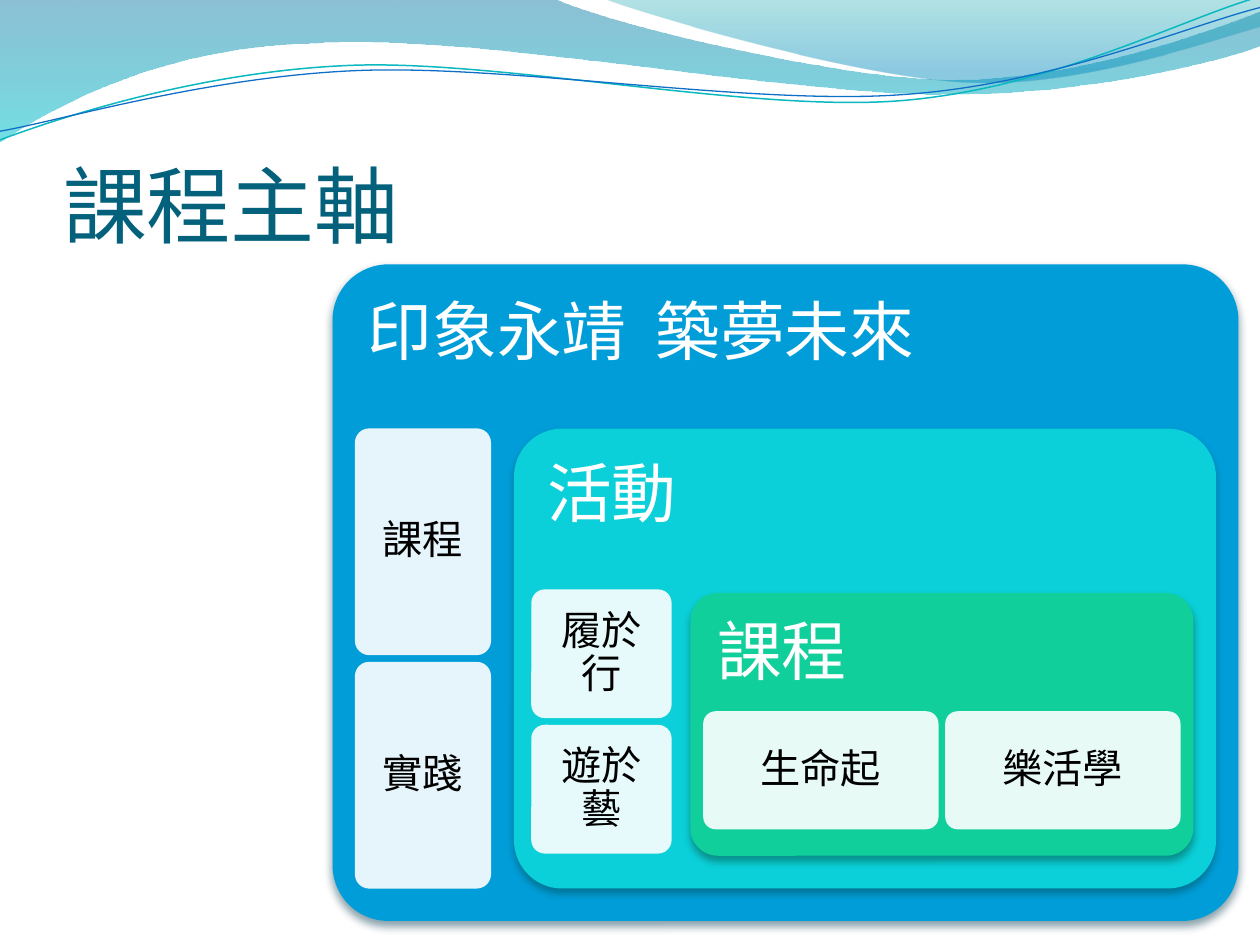
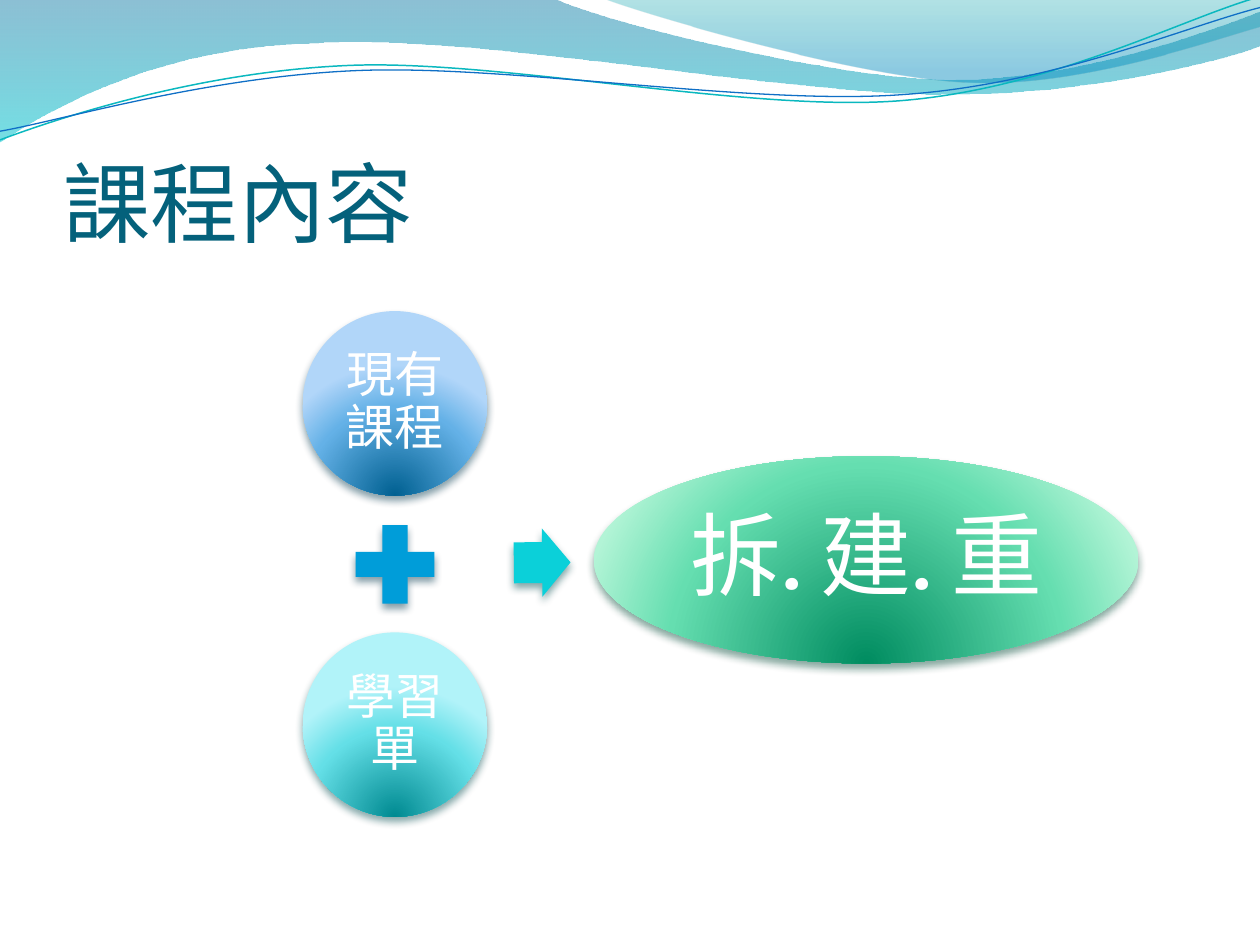
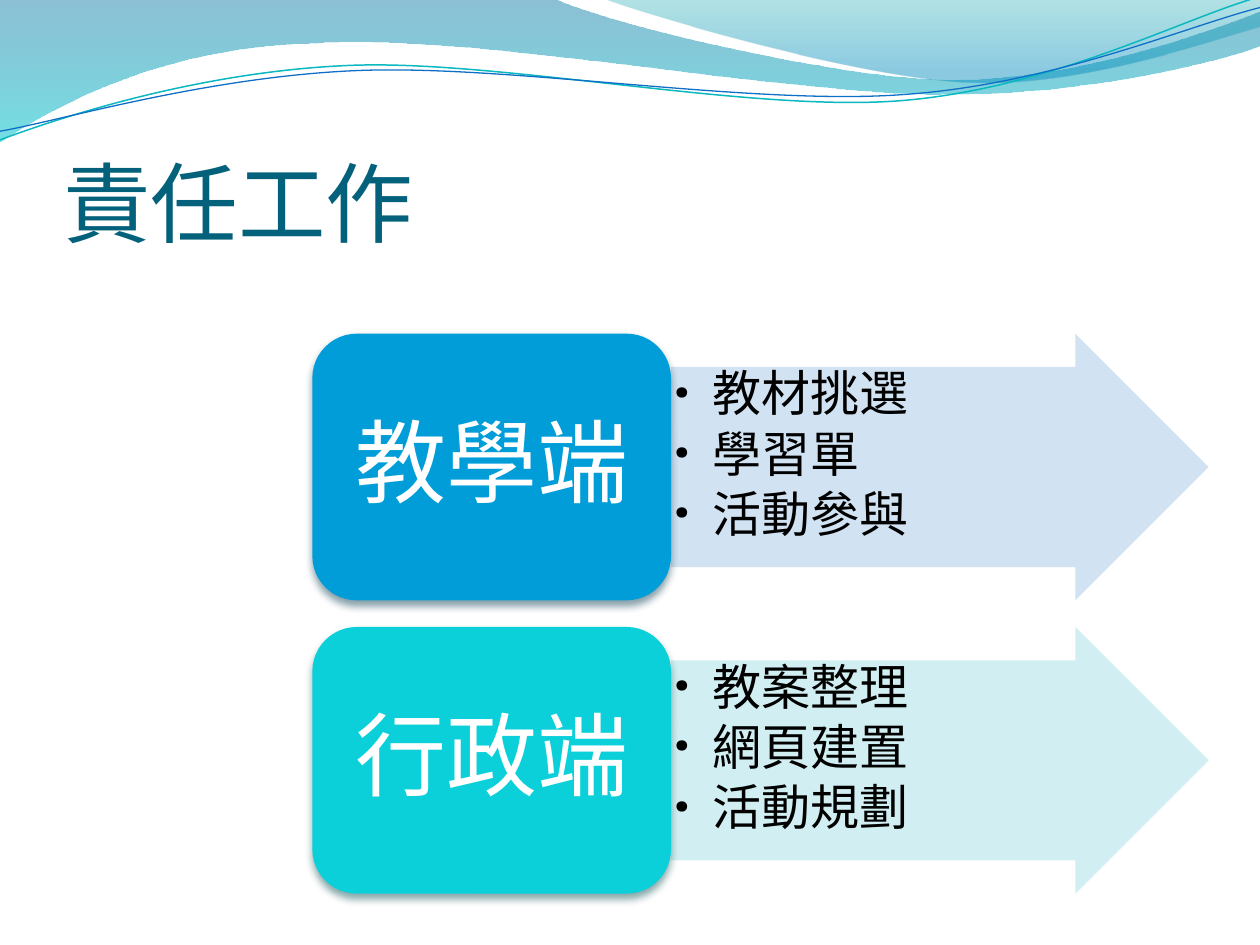
from collections import namedtuple

from pptx import Presentation
from pptx.dml.color import RGBColor
from pptx.enum.shapes import MSO_SHAPE as Shape
from pptx.enum.text import MSO_ANCHOR as Anchor, PP_ALIGN as Align
from pptx.oxml import parse_xml
from pptx.oxml.ns import nsdecls, qn
from pptx.util import Pt

# Accent: flat fill, shadow colour, and dark, middle and light gradient tones
Accent = namedtuple("Accent", "flat shadow tones")


class Theme:
    title_font, body_font = "Calibri", "Vollkorn"
    title, white, black = "04617B", "FFFFFF", "000000"
    blue = Accent("009DD9", "00374C", ("006091", "64B1E7", "B1D6F9"))
    cyan = Accent("0BD0D9", "024B4E", ("008A91", "64DFE7", "B1F3F9"))
    green = Accent("10CF9B", "044A37", ("008C60", "65DEB0", "B2F4D6"))
    pale_blue, pale_cyan = "CCDFF1", "CCEEF1"
    wave_left = [(0, "0074A1", 45), (100, "00C6CF", 55)]
    wave_right = [(0, "00A1A9", 30), (80, "008BBF", 45)]
    teal_line, blue_line = "0AB8BF", "0F6FC6"
    huge, panel, medium, card = 52, 37, 28, 23


DOWNWARD = '<a:lin ang="5400000" scaled="0"/>'
FROM_BELOW = ('<a:path path="circle"><a:fillToRect l="50000" t="130000" '
              'r="50000" b="-30000"/></a:path>')


def paint(shape, stops, direction=DOWNWARD, shadow=None):
    """Fill with (position, colour, opacity) stops; one stop gives a solid fill."""
    colors = [f'<a:srgbClr val="{color}"><a:alpha val="{opacity * 1000}"/></a:srgbClr>'
              for _, color, opacity in stops]
    if len(stops) == 1:
        xml = f'<a:solidFill {nsdecls("a")}>{colors[0]}</a:solidFill>'
    else:
        marks = "".join(f'<a:gs pos="{stop[0] * 1000}">{color}</a:gs>'
                        for stop, color in zip(stops, colors))
        xml = (f'<a:gradFill {nsdecls("a")} rotWithShape="1">'
               f'<a:gsLst>{marks}</a:gsLst>{direction}</a:gradFill>')
    shape.line.fill.background()
    shape.fill.background()
    shape.shadow.inherit = False
    properties = shape.element.spPr
    properties.replace(properties.find(qn("a:noFill")), parse_xml(xml))
    if shadow:
        properties.find(qn("a:effectLst")).append(parse_xml(
            f'<a:outerShdw {nsdecls("a")} blurRad="{Pt(4.5)}" dist="{Pt(3)}" '
            f'dir="5400000" rotWithShape="0"><a:srgbClr val="{shadow}">'
            '<a:alpha val="48000"/></a:srgbClr></a:outerShdw>'))


def write(shape, lines, size, color, align=Align.CENTER, anchor=Anchor.MIDDLE,
          margins=(0, 0, 0, 0), font=Theme.body_font, spacing=0.9):
    frame = shape.text_frame
    frame.word_wrap = True
    frame.vertical_anchor = anchor
    (frame.margin_left, frame.margin_top,
     frame.margin_right, frame.margin_bottom) = map(Pt, margins)
    frame.text = "\n".join(lines)
    for para in frame.paragraphs:
        para.alignment = align
        para.line_spacing = spacing
        para.font.name = font
        para.font.size = Pt(size)
        para.font.color.rgb = RGBColor.from_string(color)


deck = Presentation()
deck.slide_width, deck.slide_height = Pt(720), Pt(540)
blank = deck.slide_layouts[6]
for placeholder in list(blank.placeholders):
    blank.shapes.element.remove(placeholder.element)

# Titles
pages = []
for heading, size in (("課程主軸", 48), ("課程內容", 50), ("責任工作", 50)):
    page = deck.slides.add_slide(blank)
    box = page.shapes.add_textbox(Pt(36), Pt(55.4), Pt(653.8), Pt(90))
    write(box, [heading], size, Theme.title, Align.LEFT, Anchor.BOTTOM,
          (0, 3.6, 0, 0), Theme.title_font, 1)
    pages.append(page)
axis_page, content_page, duty_page = pages

# Waves: start point, then lines (one point) and Bezier curves (three points)
LINE_TILT = 357.3
wave_outlines = [
    ([(0, 0)], [[(316.8, -0.7)],
                [(342.7, 12.2), (478.1, 45.4), (545.8, 45.4)],
                [(614.2, 45.4), (689.8, 18.7), (720, 6.5)],
                [(720.7, 25.9)],
                [(707.8, 31.7), (626.4, 54.7), (537.1, 54)],
                [(447.1, 54), (275, 20.2), (185, 24.5)],
                [(92.9, 25.9), (33.1, 59.8), (-0.7, 81.4)],
                [(0, 0)]], Theme.wave_left, None),
    ([(344.9, -0.7)], [[(366.5, 7.9), (491, 44.6), (553.7, 46.8)],
                       [(616.3, 49.7), (691.9, 23), (720, 15.1)],
                       [(720, 0)], [(344.9, -0.7)]], Theme.wave_right, None),
    ([(-1.4, 63)], [[(33.8, 51.7), (114.1, 29.4), (199.8, 29.9)],
                    [(284.8, 30.3), (425.9, 67.3), (512.5, 64.9)],
                    [(599.1, 62.4), (676.5, 25.7), (720.2, 15.5)]],
     None, (Theme.teal_line, 0.85)),
    ([(-1.1, 58)], [[(32.9, 53.8), (118.3, 32.5), (204.1, 33)],
                    [(290.5, 33.4), (428.9, 63.8), (515.5, 61.4)],
                    [(601.4, 59.6), (678.4, 30.1), (721.4, 21.3)]],
     None, (Theme.blue_line, 0.75)),
]
waves = []
for [(start_x, start_y)], segments, stops, stroke in wave_outlines:
    builder = axis_page.shapes.build_freeform(Pt(start_x), Pt(start_y))
    builder.add_line_segments(
        [(Pt(x), Pt(y)) for segment in segments for x, y in segment],
        close=stops is not None)
    wave = builder.convert_to_shape()
    # Turn each three-point group of lines into one Bezier curve
    lines = iter(list(wave.element.iter(qn("a:lnTo"))))
    for segment in segments:
        group = [next(lines) for _ in segment]
        if len(group) == 3:
            curve = parse_xml(f'<a:cubicBezTo {nsdecls("a")}/>')
            group[0].addprevious(curve)
            for line in group:
                curve.append(line[0])
                line.getparent().remove(line)
    if stops:
        paint(wave, stops)
    else:
        wave.rotation = LINE_TILT
        wave.fill.background()
        wave.shadow.inherit = False
        wave.line.color.rgb = RGBColor.from_string(stroke[0])
        wave.line.width = Pt(stroke[1])
    waves.append(wave)
# The blank layout carries the waves for every slide
for wave in waves:
    blank.shapes.element.append(wave.element)

# Slide 1: nested panels, each with a column or row of cards
CARD_GAP = 3.8
panels = [
    ("印象永靖  築夢未來", (190, 151.1, 517.7, 375.2), 0.085, Theme.blue,
     ("課程", "實踐"), (202.8, 244.8, 77.8, 129.6), "column"),
    ("活動", (293.7, 244.9, 401.2, 262.8), 0.105, Theme.cyan,
     ("履於行", "遊於藝"), (303.6, 336.8, 80.2, 73.6), "column"),
    ("課程", (394.5, 338.8, 287.4, 150.2), 0.105, Theme.green,
     ("生命起", "樂活學"), (401.8, 406.4, 134.5, 67.5), "row"),
]
for label, frame, rounding, accent, cards, (x, y, width, height), flow in panels:
    panel = axis_page.shapes.add_shape(Shape.ROUNDED_RECTANGLE, *map(Pt, frame))
    panel.adjustments[0] = rounding
    paint(panel, [(0, accent.flat, 100)], shadow=accent.shadow)
    write(panel, [label], Theme.panel, Theme.white, Align.LEFT, Anchor.TOP,
          (10.8,) * 4)
    for index, text in enumerate(cards):
        left = x + index * (width + CARD_GAP) * (flow == "row")
        top = y + index * (height + CARD_GAP) * (flow == "column")
        card = axis_page.shapes.add_shape(
            Shape.ROUNDED_RECTANGLE, Pt(left), Pt(top), Pt(width), Pt(height))
        card.adjustments[0] = 0.105
        paint(card, [(0, Theme.white, 90)])
        write(card, [text], Theme.card, Theme.black, margins=(7.2,) * 4)

# Slide 2: two inputs lead to one result
ovals = [
    ("現有課程", (173, 177.8, 105.4, 105.4), Theme.blue, Theme.medium, 2.9),
    ("學習單", (173, 361.4, 105.4, 105.4), Theme.cyan, Theme.medium, 2.9),
    ("拆. 建. 重", (339.3, 260.7, 311.3, 118.4), Theme.green, Theme.huge, 5),
]
for text, frame, accent, size, margin in ovals:
    oval = content_page.shapes.add_shape(Shape.OVAL, *map(Pt, frame))
    stops = [(position, tone, 100)
             for position, tone in zip((0, 68, 100), accent.tones)]
    paint(oval, stops, FROM_BELOW, accent.shadow)
    write(oval, [text], size, Theme.white, margins=(margin,) * 4)

signs = [
    (Shape.MATH_PLUS, (195.1, 291.9, 61.2, 61.2), Theme.blue, 0),
    (Shape.RIGHT_ARROW, (293.6, 302, 32.4, 39), Theme.cyan, 359.5),
]
for kind, frame, accent, rotation in signs:
    sign = content_page.shapes.add_shape(kind, *map(Pt, frame))
    sign.rotation = rotation
    if kind == Shape.RIGHT_ARROW:
        sign.adjustments[0] = 0.6
    paint(sign, [(0, accent.flat, 100)], shadow=accent.shadow)

# Slide 3: each side with the arrow that lists its duties
ROW_TOP, ROW_HEIGHT, ROW_PITCH = 190.7, 152.4, 167.6
SIDE_LEFT, SIDE_WIDTH, ARROW_WIDTH = 178.5, 205, 307.2
BULLET_INDENT = Pt(22.3)
sides = [
    ("教學端", Theme.blue, Theme.pale_blue, ("教材挑選", "學習單", "活動參與")),
    ("行政端", Theme.cyan, Theme.pale_cyan, ("教案整理", "網頁建置", "活動規劃")),
]
for row, (name, accent, pale, duties) in enumerate(sides):
    top = ROW_TOP + row * ROW_PITCH
    arrow = duty_page.shapes.add_shape(
        Shape.RIGHT_ARROW, Pt(SIDE_LEFT + SIDE_WIDTH), Pt(top),
        Pt(ARROW_WIDTH), Pt(ROW_HEIGHT))
    arrow.adjustments[0] = 0.75
    paint(arrow, [(0, pale, 90)])
    write(arrow, duties, Theme.medium, Theme.black, Align.LEFT, Anchor.TOP,
          (1.4,) * 4)
    for para in arrow.text_frame.paragraphs:
        para.level = 1
        para.space_after = Pt(4.2)
        bullet = para._p.get_or_add_pPr()
        bullet.set("marL", str(BULLET_INDENT))
        bullet.set("indent", str(-BULLET_INDENT))
        for mark in (f'<a:buFont {nsdecls("a")} typeface="{Theme.body_font}"/>',
                     f'<a:buChar {nsdecls("a")} char="•"/>'):
            bullet.insert_element_before(
                parse_xml(mark), "a:tabLst", "a:defRPr", "a:extLst")

    side = duty_page.shapes.add_shape(
        Shape.ROUNDED_RECTANGLE, Pt(SIDE_LEFT), Pt(top),
        Pt(SIDE_WIDTH), Pt(ROW_HEIGHT))
    paint(side, [(0, accent.flat, 100)], shadow=accent.shadow)
    write(side, [name], Theme.huge, Theme.white, margins=(15.6, 7.8, 15.6, 7.8))

deck.save("out.pptx")
